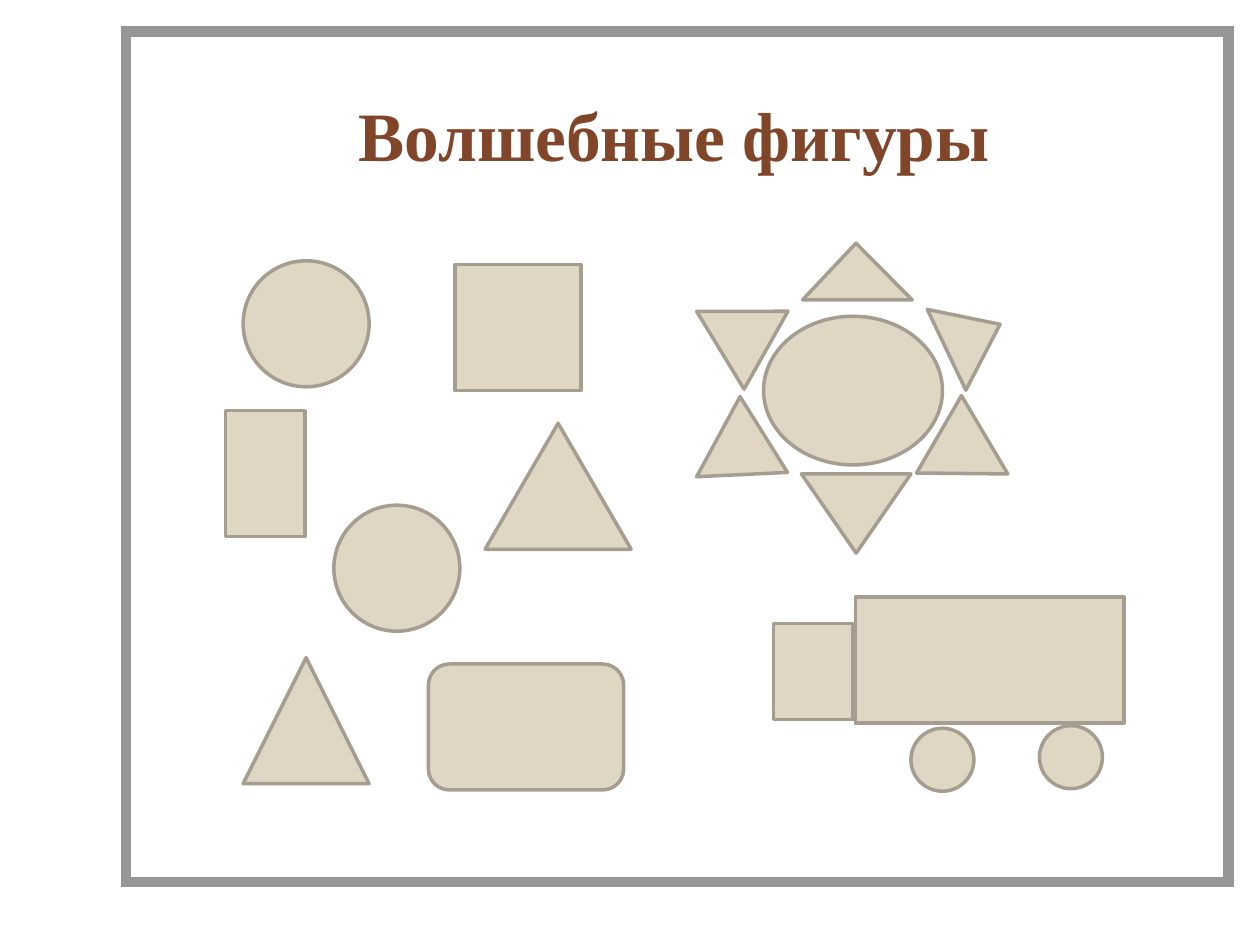
"""Build the "Волшебные фигуры" slide: loose shapes, a flower and a truck on a 100 by 75 grid."""
from lxml import etree
from pptx import Presentation
from pptx import util as u
from pptx.dml.color import RGBColor
from pptx.enum import shapes, text
from pptx.oxml import ns

COLORS = {"paper": "FFFFFF", "frame": "969696", "title": "81452A", "sand": "DFD6C3", "edge": "A59E90"}
KIND = shapes.MSO_SHAPE

deck = Presentation()
deck.slide_width, deck.slide_height = u.Inches(10), u.Inches(7.5)
CELL = deck.slide_width / 100
slide = deck.slides.add_slide(deck.slide_layouts[6])


def grid(*cells):
    return [round(cell * CELL) for cell in cells]


def draw(kind, place, fill="sand", edge="edge", weight=2):
    figure = slide.shapes.add_shape(kind, *grid(*place))
    figure.shadow.inherit = False
    figure.fill.solid()
    figure.fill.fore_color.rgb = RGBColor.from_string(COLORS[fill])
    figure.line.color.rgb = RGBColor.from_string(COLORS[edge])
    figure.line.width = u.Pt(weight)
    return figure


frame = draw(KIND.RECTANGLE, (10, 2.5, 87.5, 67.5), "paper", "frame", 6)
etree.SubElement(frame.line._get_or_add_ln(), ns.qn("a:miter"), lim="800000")

title = slide.shapes.add_textbox(*grid(11, 4.4, 85, 12.5)).text_frame
title.word_wrap = True
title.vertical_anchor = text.MSO_ANCHOR.MIDDLE
heading = title.paragraphs[0]
heading.text = "Волшебные фигуры"
heading.alignment = text.PP_ALIGN.CENTER
heading.font.name = "Times New Roman"
heading.font.size = u.Pt(39.6)
heading.font.bold = True
heading.font.color.rgb = RGBColor.from_string(COLORS["title"])

loose_figures = [
    (KIND.RECTANGLE, (17.9, 32.6, 6.3, 10)),
    (KIND.OVAL, (26.5, 40.1, 10, 10)),
    (KIND.ISOSCELES_TRIANGLE, (19.3, 52.2, 10, 10)),
    (KIND.ROUNDED_RECTANGLE, (34, 52.7, 15.5, 10)),
    (KIND.RECTANGLE, (36.1, 21, 10, 10)),
    (KIND.OVAL, (19.3, 20.7, 10, 10)),
    (KIND.ISOSCELES_TRIANGLE, (38.5, 33.6, 11.6, 10)),
]
flower_heart = [(KIND.OVAL, (60.6, 25.1, 14.2, 11.8))]
for kind, place in loose_figures + flower_heart:
    draw(kind, place)

petals = [
    ((63.7, 19.3, 8.7, 4.5), 0, 0.487),
    ((54.5, 23.1, 7.1, 6.3), 299.4, 0.498),
    ((63.6, 37.6, 8.7, 6.3), 180, 0.5),
    ((54.4, 33, 7.1, 6.3), 238, 0.498),
    ((73.7, 32.9, 7.1, 6.3), 120.1, 0.498),
    ((73.7, 24.4, 7.1, 4.7), 64.5, 0.5),
]
for place, turn, apex in petals:
    petal = draw(KIND.ISOSCELES_TRIANGLE, place)
    petal.rotation = turn
    petal.adjustments[0] = apex

truck_parts = [
    (KIND.RECTANGLE, (67.9, 47.4, 21.3, 10)),
    (KIND.FLOWCHART_CONNECTOR, (72.3, 57.8, 5, 5)),
    (KIND.FLOWCHART_CONNECTOR, (82.5, 57.6, 5, 5)),
    (KIND.RECTANGLE, (61.4, 49.5, 6.3, 7.6)),
]
for kind, place in truck_parts:
    draw(kind, place)

deck.save("out.pptx")
